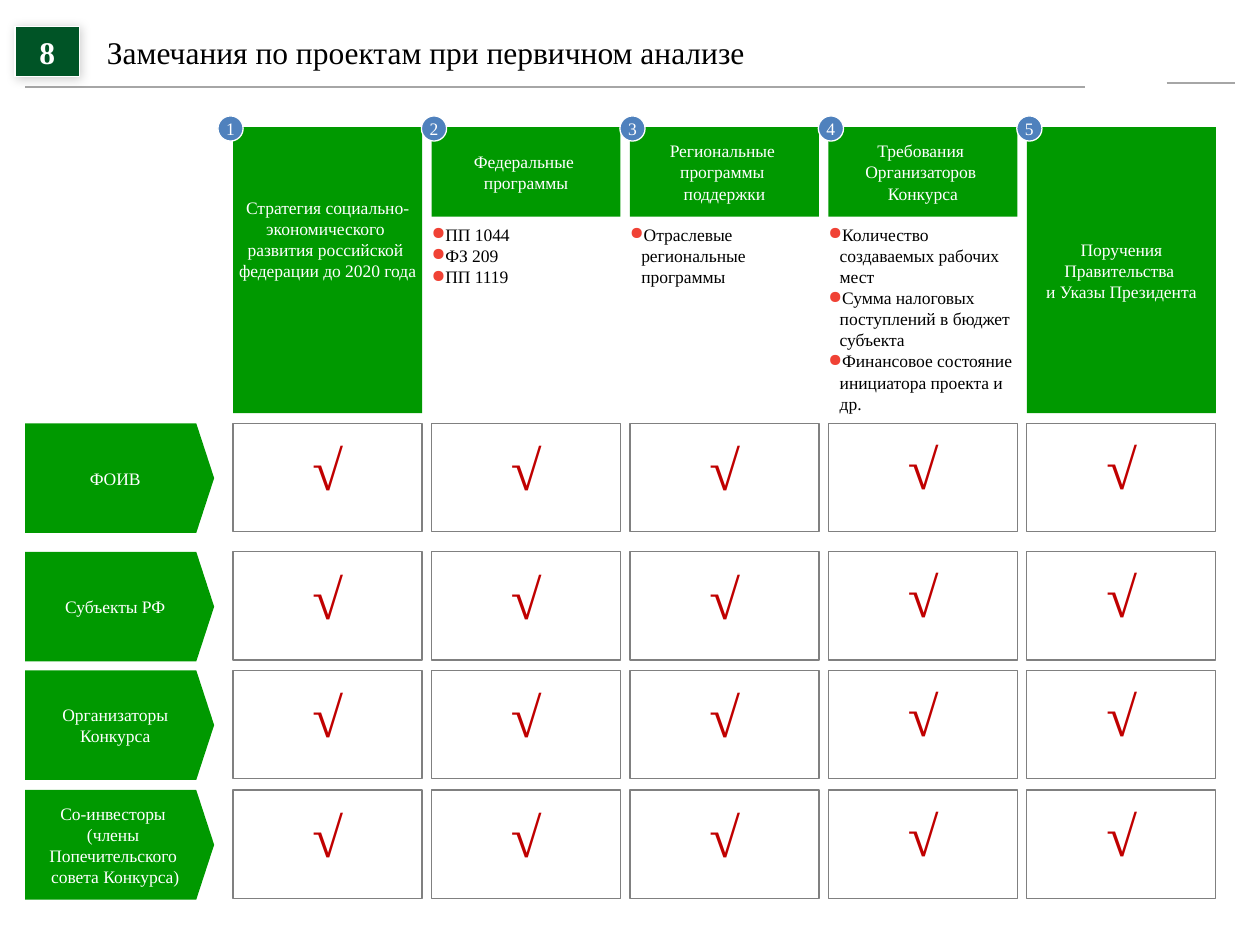
from lxml import etree
from pptx import Presentation
from pptx.dml.color import RGBColor
from pptx.enum import shapes, text
from pptx.oxml.ns import qn
from pptx.util import Inches, Pt

FONT = "Times New Roman"
GREEN, GRAY, WHITE = "009900", "808080", "FFFFFF"
SHAPE = shapes.MSO_SHAPE
rgb = RGBColor.from_string


def add_box(kind, x, y, w, h, fill=None, line=None):
    sp = s.shapes.add_shape(kind, Inches(x), Inches(y), Inches(w), Inches(h))
    sp.shadow.inherit = False
    if fill:
        sp.fill.solid()
        sp.fill.fore_color.rgb = rgb(fill)
    else:
        sp.fill.background()
    if line:
        sp.line.color.rgb = rgb(line)
        sp.line.width = Pt(0.75)
    else:
        sp.line.fill.background()
    return sp


def write(sp, lines, size=10, color=WHITE, bold=False, align="CENTER", anchor="MIDDLE",
          wrap=False, inset=None, grow=False, bullet=None):
    """Fill a shape with one paragraph per line; inset applies to all four sides."""
    tf = sp.text_frame
    tf.word_wrap = wrap
    tf.vertical_anchor = text.MSO_ANCHOR[anchor]
    if grow:
        tf.auto_size = text.MSO_AUTO_SIZE.SHAPE_TO_FIT_TEXT
    if inset is not None:
        tf.margin_left = tf.margin_right = tf.margin_top = tf.margin_bottom = Inches(inset)
    for i, line in enumerate(lines):
        p = tf.paragraphs[0] if i == 0 else tf.add_paragraph()
        p.alignment = text.PP_ALIGN[align]
        if bullet:
            pPr = p._p.get_or_add_pPr()
            pPr.set("marL", str(Inches(0.09)))
            pPr.set("indent", str(-Inches(0.09)))
            clr = etree.SubElement(pPr, qn("a:buClr"))
            etree.SubElement(clr, qn("a:srgbClr"), val=bullet)
            etree.SubElement(pPr, qn("a:buChar"), char="●")
        r = p.add_run()
        r.text = line
        r.font.name, r.font.size, r.font.bold = FONT, Pt(size), bold
        r.font.color.rgb = rgb(color)


prs = Presentation()
prs.slide_width, prs.slide_height = Inches(10), Inches(7.5)
s = prs.slides.add_slide(prs.slide_layouts[6])

# Title bar
for x1, x2, y in [(0.2, 8.61, 0.69), (9.26, 9.8, 0.66)]:
    ln = s.shapes.add_connector(shapes.MSO_CONNECTOR.STRAIGHT,
                                Inches(x1), Inches(y), Inches(x2), Inches(y))
    ln.line.color.rgb = rgb("A6A6A6")
    ln.line.width = Pt(1)
    etree.SubElement(ln._element.spPr, qn("a:effectLst"))

number = add_box(SHAPE.RECTANGLE, 0.12, 0.21, 0.51, 0.4, "005426", WHITE)
write(number, ["8"], size=18, bold=True, anchor="TOP", wrap=True, grow=True)
shadow = etree.SubElement(number._element.spPr.find(qn("a:effectLst")), qn("a:outerShdw"),
                          blurRad=str(Pt(6)), dist=str(Pt(1)), dir=str(45 * 60000))
clr = etree.SubElement(shadow, qn("a:srgbClr"), val="000000")
etree.SubElement(clr, qn("a:alpha"), val="20000")

title = s.shapes.add_textbox(Inches(0.75), Inches(0.21), Inches(5.31), Inches(0.4))
write(title, ["Замечания по проектам при первичном анализе"], size=18, color="000000",
      align="LEFT", anchor="TOP", grow=True)

# Numbered column heads: heading lines, bullets below
columns = [
    (["Стратегия социально-", "экономического ", "развития российской ",
      "федерации до 2020 года"], []),
    (["Федеральные ", "программы"], ["ПП 1044", "ФЗ 209", "ПП 1119"]),
    (["Региональные ", "программы ", "поддержки"],
     ["Отраслевые региональные программы"]),
    (["Требования ", "Организаторов ", "Конкурса"],
     ["Количество создаваемых рабочих мест",
      "Сумма налоговых поступлений в бюджет субъекта",
      "Финансовое состояние инициатора проекта и др."]),
    (["Поручения", "Правительства ", "и Указы Президента"], []),
]
lefts = [1.85 + 1.575 * i for i in range(len(columns))]
for i, (x, (heading, bullets)) in enumerate(zip(lefts, columns)):
    head = add_box(SHAPE.RECTANGLE, x, 1.01, 1.5, 0.71 if bullets else 2.27, GREEN)
    write(head, heading)
    if i == 0:
        head.text_frame.margin_bottom = Inches(0.55)
    if bullets:
        tb = s.shapes.add_textbox(Inches(x), Inches(1.78), Inches(1.5), Inches(1.02))
        write(tb, bullets, color="000000", align="LEFT", anchor="TOP", wrap=True,
              inset=0, bullet="F04235")
    badge_x = x - (0.12 if i == 0 else 0.08)
    badge = add_box(SHAPE.OVAL, badge_x, 0.92, 0.2, 0.2, "4F81BD", WHITE)
    write(badge, [str(i + 1)])

# Rows: arrow label and a tick in each column
rows = [
    (3.36, ["ФОИВ"]),
    (4.38, ["Субъекты РФ"]),
    (5.32, ["Организаторы", "Конкурса"]),
    (6.27, ["Со-инвесторы ", "(члены ", "Попечительского ", "совета Конкурса)"]),
]
for y, label in rows:
    arrow = add_box(SHAPE.PENTAGON, 0.2, y, 1.5, 0.87, GREEN)
    arrow.adjustments[0] = 0.163
    write(arrow, label)
    for i, x in enumerate(lefts):
        add_box(SHAPE.RECTANGLE, x, y, 1.5, 0.86, line=GRAY)
        tick_y = y + (0.09 if i < 3 else 0.08)
        tick = s.shapes.add_textbox(Inches(x + 0.63), Inches(tick_y), Inches(0.25), Inches(0.54))
        write(tick, ["√"], size=32, color="C00000", bold=True, align="LEFT", anchor="TOP",
              inset=0, grow=True)

prs.save("out.pptx")
